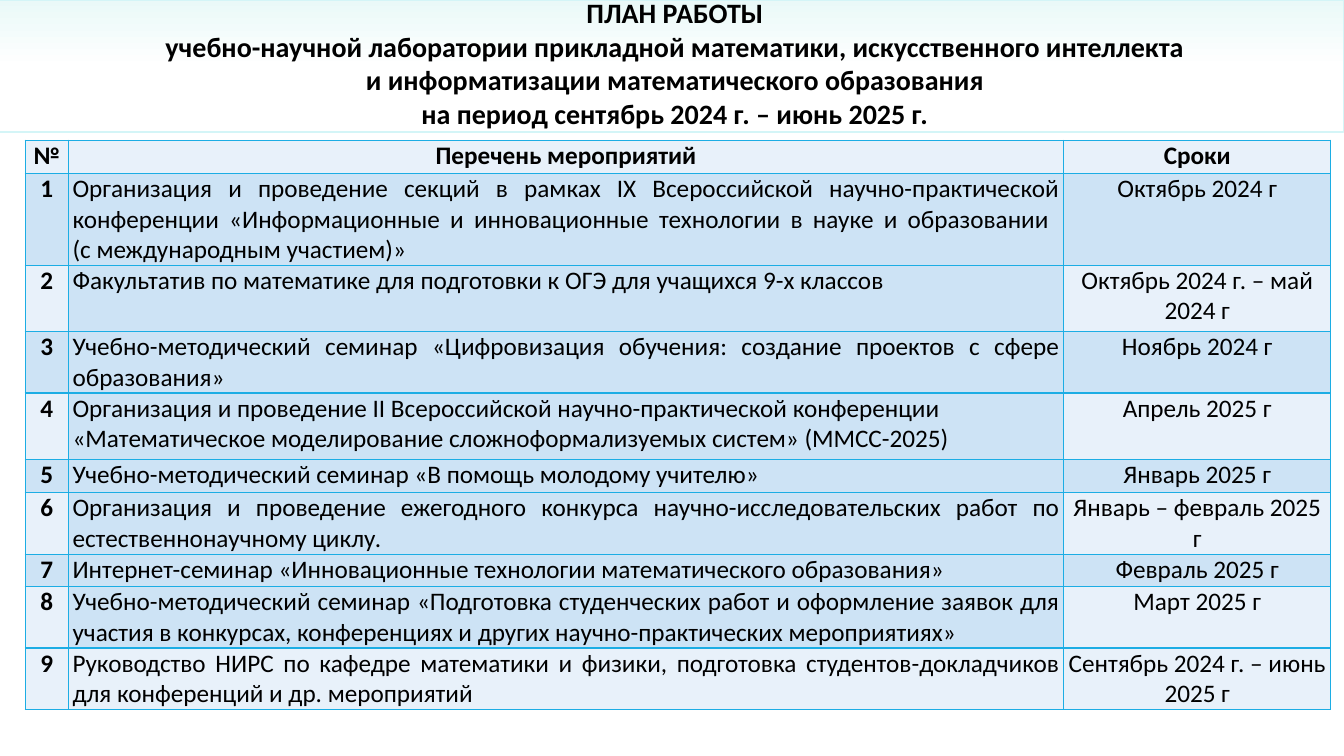
from lxml.etree import SubElement as Sub
from pptx import Presentation
from pptx.dml.color import RGBColor as RGB
from pptx.enum.shapes import MSO_SHAPE as Shape
from pptx.enum.text import MSO_ANCHOR as Anchor, PP_ALIGN as Align
from pptx.oxml.ns import qn
from pptx.util import Inches as Inch, Pt

WHITE = RGB(0xFF, 0xFF, 0xFF)
BLACK = RGB(0, 0, 0)
MINT = RGB(0xEA, 0xF9, 0xF8)
EDGE = RGB(0xD4, 0xF5, 0xF7)
BLUE = RGB(0x1C, 0xAD, 0xE4)
PALE = RGB(0xE8, 0xF1, 0xFA)
SKY = RGB(0xCD, 0xE3, 0xF5)

TITLE = (
    "ПЛАН РАБОТЫ\v"
    "учебно-научной лаборатории прикладной математики, искусственного интеллекта "
    "и информатизации математического образования\v"
    "на период сентябрь 2024 г. – июнь 2025 г."
)
HEAD = ("№", "Перечень мероприятий", "Сроки")
PLAN = [
    ("Организация и проведение секций в рамках IX Всероссийской научно-практической "
     "конференции «Информационные и инновационные технологии в науке и образовании \v"
     "(с международным участием)»", "Октябрь 2024 г"),
    ("Факультатив по математике для подготовки к ОГЭ для учащихся 9-х классов",
     "Октябрь 2024 г. – май 2024 г"),
    ("Учебно-методический семинар «Цифровизация обучения: создание проектов с сфере "
     "образования»", "Ноябрь 2024 г"),
    ("Организация и проведение II Всероссийской научно-практической конференции\n"
     "«Математическое моделирование сложноформализуемых систем» (ММСС-2025)",
     "Апрель 2025 г"),
    ("Учебно-методический семинар «В помощь молодому учителю»", "Январь 2025 г"),
    ("Организация и проведение ежегодного конкурса научно-исследовательских работ по "
     "естественнонаучному циклу.", "Январь – февраль 2025 г"),
    ("Интернет-семинар «Инновационные технологии математического образования»",
     "Февраль 2025 г"),
    ("Учебно-методический семинар «Подготовка студенческих работ и оформление заявок для "
     "участия в конкурсах, конференциях и других научно-практических мероприятиях»",
     "Март 2025 г"),
    ("Руководство НИРС по кафедре математики и физики, подготовка студентов-докладчиков "
     "для конференций и др. мероприятий", "Сентябрь 2024 г. – июнь 2025 г"),
]
COLS = (0.43, 9.87, 2.65)
ROWS = (0.33, 0.91, 0.66, 0.61, 0.66, 0.33, 0.61, 0.32, 0.61, 0.61)


def put(item, form):
    for key, val in form.items():
        setattr(item, key, val)


class Page:
    def __init__(self, deck):
        self.wide, self.high = deck.slide_width, deck.slide_height
        self.slide = deck.slides.add_slide(deck.slide_layouts[6])
        self.font = {"name": "Calibri"}

    def area(self, left, top, wide, high):
        return [int(part * size) for part, size in
                zip((left, top, wide, high), (self.wide, self.high) * 2)]

    def words(self, frame, text, size, bold, align):
        frame.text = text
        for para in frame.paragraphs:
            para.alignment = align
            for run in para.runs:
                put(run.font, {**self.font, "size": Pt(size), "bold": bold})
                run.font.color.rgb = BLACK

    def band(self, *box):
        band = self.slide.shapes.add_shape(Shape.RECTANGLE, *self.area(*box))
        band.shadow.inherit = False
        band.fill.gradient()
        band.fill.gradient_angle = 90
        for stop, spot, color in zip(band.fill.gradient_stops, (0.49, 1), (WHITE, MINT)):
            stop.position = spot
            stop.color.rgb = color
        band.line.color.rgb = EDGE
        band.line.width = Pt(0.75)

    def title(self, text, *box):
        frame = self.slide.shapes.add_textbox(*self.area(*box)).text_frame
        put(frame, {"word_wrap": True, "vertical_anchor": Anchor.MIDDLE,
                    "margin_left": Inch(0.15), "margin_right": Inch(0.15)})
        self.words(frame, text, 20, True, Align.CENTER)

    def edge(self, cell, top, base):
        props = cell._tc.get_or_add_tcPr()
        for side, width in zip("LRTB", (1, 1, top, base)):
            line = Sub(props, qn(f"a:ln{side}"), w=str(Pt(width)))
            fill = Sub(line, qn("a:solidFill"))
            Sub(fill, qn("a:srgbClr"), val=str(BLUE))

    def cell(self, cell, text, row, col):
        last = len(ROWS) - 1
        head = row == 0
        pad = Inch(0.07 if head or col == 0 else 0.04)
        put(cell, {"margin_left": pad, "margin_right": pad,
                   "margin_top": 0, "margin_bottom": 0})
        self.edge(cell, 2 if row == last else 1, 2 if row == last - 1 else 1)
        cell.fill.solid()
        dark = row % 2 or (col == 1 and not head)
        cell.fill.fore_color.rgb = SKY if dark and row != last else PALE
        align = Align.JUSTIFY if col == 1 and not head else Align.CENTER
        self.words(cell.text_frame, text, 18, head or col == 0, align)

    def table(self, data, *box):
        table = self.slide.shapes.add_table(len(ROWS), len(COLS), *self.area(*box)).table
        for col, wide in zip(table.columns, COLS):
            col.width = Inch(wide)
        for row, high in zip(table.rows, ROWS):
            row.height = Inch(high)
        for row, line in enumerate(data):
            for col, text in enumerate(line):
                self.cell(table.cell(row, col), text, row, col)


def main():
    deck = Presentation()
    put(deck, {"slide_width": Inch(13.33), "slide_height": Inch(7.5)})
    page = Page(deck)
    page.band(0, 0, 1, 1.31 / 7.5)
    page.title(TITLE, 1.46 / 13.33, 0.36 / 7.5, 10.47 / 13.33, 0.53 / 7.5)
    data = [HEAD] + [(str(num), *item) for num, item in enumerate(PLAN, 1)]
    page.table(data, 0.25 / 13.33, 1.39 / 7.5, sum(COLS) / 13.33, sum(ROWS) / 7.5)
    deck.save("out.pptx")


if __name__ == "__main__":
    main()
